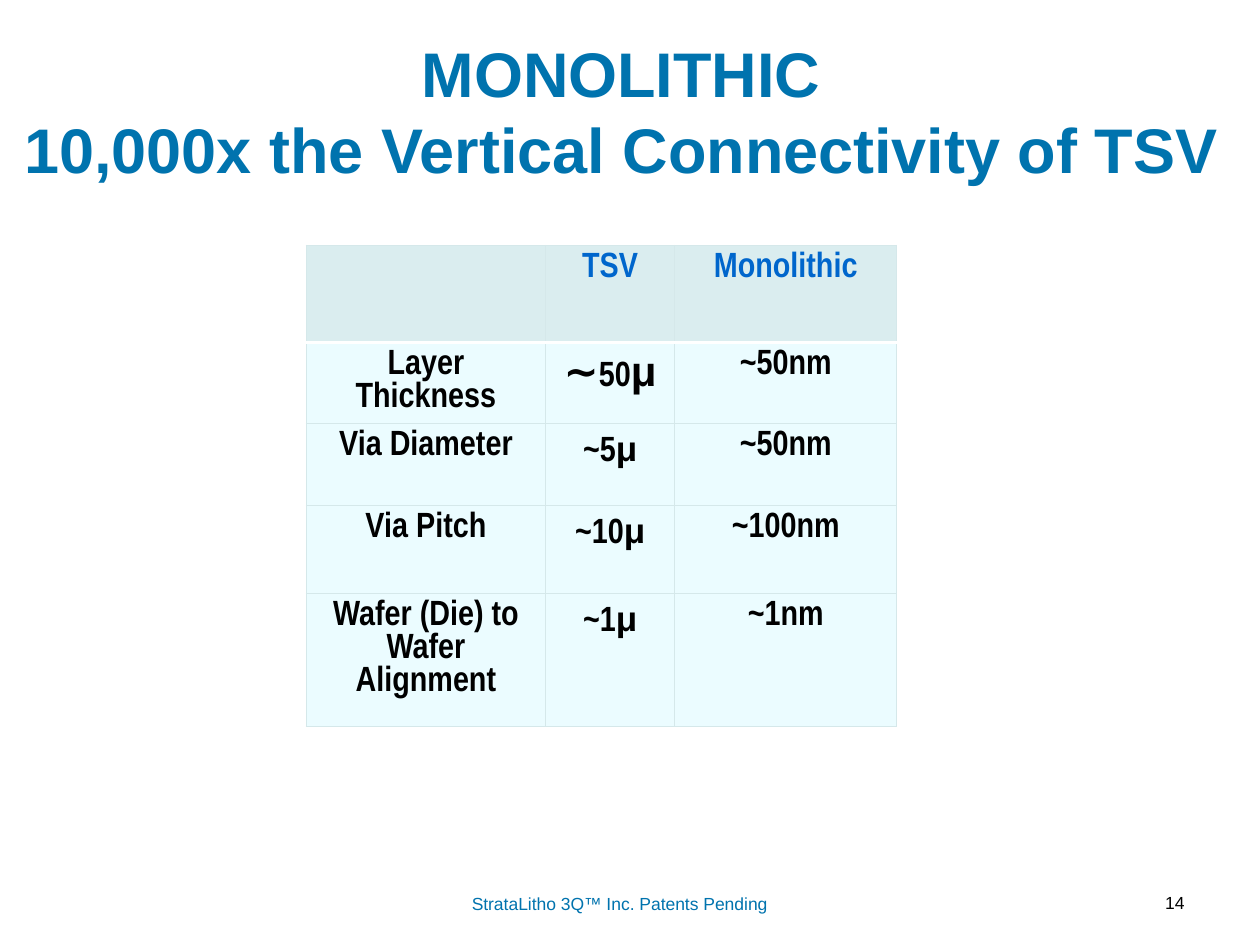
from pptx import Presentation
from pptx.dml.color import RGBColor
from pptx.enum.text import MSO_ANCHOR, PP_ALIGN
from pptx.oxml import parse_xml
from pptx.oxml.ns import nsdecls
from pptx.util import Pt

TITLE = "MONOLITHIC \v10,000x the Vertical Connectivity of TSV "
FOOTER = "StrataLitho 3Q™ Inc. Patents Pending"
PAGE_NUMBER = "14"
NARROW, WIDE = "Arial Narrow", "Arial"
BLUE, HEADER_BLUE, BLACK = "0073AE", "0066CC", "000000"
HEADER_FILL, BODY_FILL = "DAEDEF", "EBFCFF"
GRID, WHITE = "D5E8EA", "FFFFFF"

ROWS = [
    ("", "TSV", "Monolithic"),
    ("Layer Thickness", [("∼", WIDE, 24), ("50", NARROW, 20), ("μ", WIDE, 24)], "~50nm"),
    ("Via Diameter", [("~5", NARROW, 20), ("μ", WIDE, 20)], "~50nm"),
    ("Via Pitch", [("~10", NARROW, 20), ("μ", WIDE, 20)], "~100nm"),
    ("Wafer (Die) to Wafer Alignment", [("~1", NARROW, 20), ("μ", WIDE, 20)], "~1nm"),
]
COLUMN_WIDTHS = [136.8, 73.7, 127]
ROW_HEIGHTS = [55.6, 46.4, 46.8, 50.4, 76]


def color(value):
    return RGBColor.from_string(value)


def style(font, name, size, value, bold=False):
    font.name, font.size, font.bold = name, Pt(size), bold
    font.color.rgb = color(value)


def place(shape, left, top, width, height):
    shape.left, shape.top, shape.width, shape.height = map(Pt, (left, top, width, height))


def set_border(cell, side, value, width):
    cell._tc.get_or_add_tcPr().append(parse_xml(
        f'<a:{side} {nsdecls("a")} w="{Pt(width)}"><a:solidFill>'
        f'<a:srgbClr val="{value}"/></a:solidFill></a:{side}>'))


def fill_cell(cell, content, row):
    for side in ("lnL", "lnR", "lnT", "lnB"):
        header_edge = (row, side) in ((0, "lnB"), (1, "lnT"))
        set_border(cell, side, *((WHITE, 2) if header_edge else (GRID, 0.75)))
    cell.fill.solid()
    cell.fill.fore_color.rgb = color(BODY_FILL if row else HEADER_FILL)
    paragraph = cell.text_frame.paragraphs[0]
    paragraph.alignment = PP_ALIGN.CENTER
    parts = content if isinstance(content, list) else [(content, NARROW, 20)]
    for text, name, size in parts:
        run = paragraph.add_run()
        run.text = text
        style(run.font, name, size, BLACK if row else HEADER_BLUE, True)


def add_label(slide, text, box, alignment, value):
    shape = slide.shapes.add_textbox(*map(Pt, box))
    frame = shape.text_frame
    frame.word_wrap = True
    frame.text = text
    paragraph = frame.paragraphs[0]
    paragraph.alignment = alignment
    style(paragraph.runs[0].font, WIDE, 10, value)


def main():
    presentation = Presentation()
    presentation.slide_width, presentation.slide_height = Pt(720), Pt(540)
    slide = presentation.slides.add_slide(presentation.slide_layouts[5])

    title = slide.shapes.title
    place(title, 0, 22, 720, 82)
    title.text_frame.text = TITLE
    title.text_frame.vertical_anchor = MSO_ANCHOR.MIDDLE
    paragraph = title.text_frame.paragraphs[0]
    paragraph.alignment = PP_ALIGN.CENTER
    for run in paragraph.runs:
        style(run.font, WIDE, 36, BLUE, True)

    table = slide.shapes.add_table(
        len(ROWS), len(COLUMN_WIDTHS), Pt(175), Pt(140.2),
        Pt(sum(COLUMN_WIDTHS)), Pt(sum(ROW_HEIGHTS))).table
    table.horz_banding = False
    for column, width in zip(table.columns, COLUMN_WIDTHS):
        column.width = Pt(width)
    for row, (contents, height) in enumerate(zip(ROWS, ROW_HEIGHTS)):
        table.rows[row].height = Pt(height)
        for column, content in enumerate(contents):
            fill_cell(table.cell(row, column), content, row)

    add_label(slide, FOOTER, (240, 507, 228, 19), PP_ALIGN.CENTER, BLUE)
    add_label(slide, PAGE_NUMBER, (604, 506, 80, 24), PP_ALIGN.RIGHT, BLACK)
    presentation.save("out.pptx")


if __name__ == "__main__":
    main()
